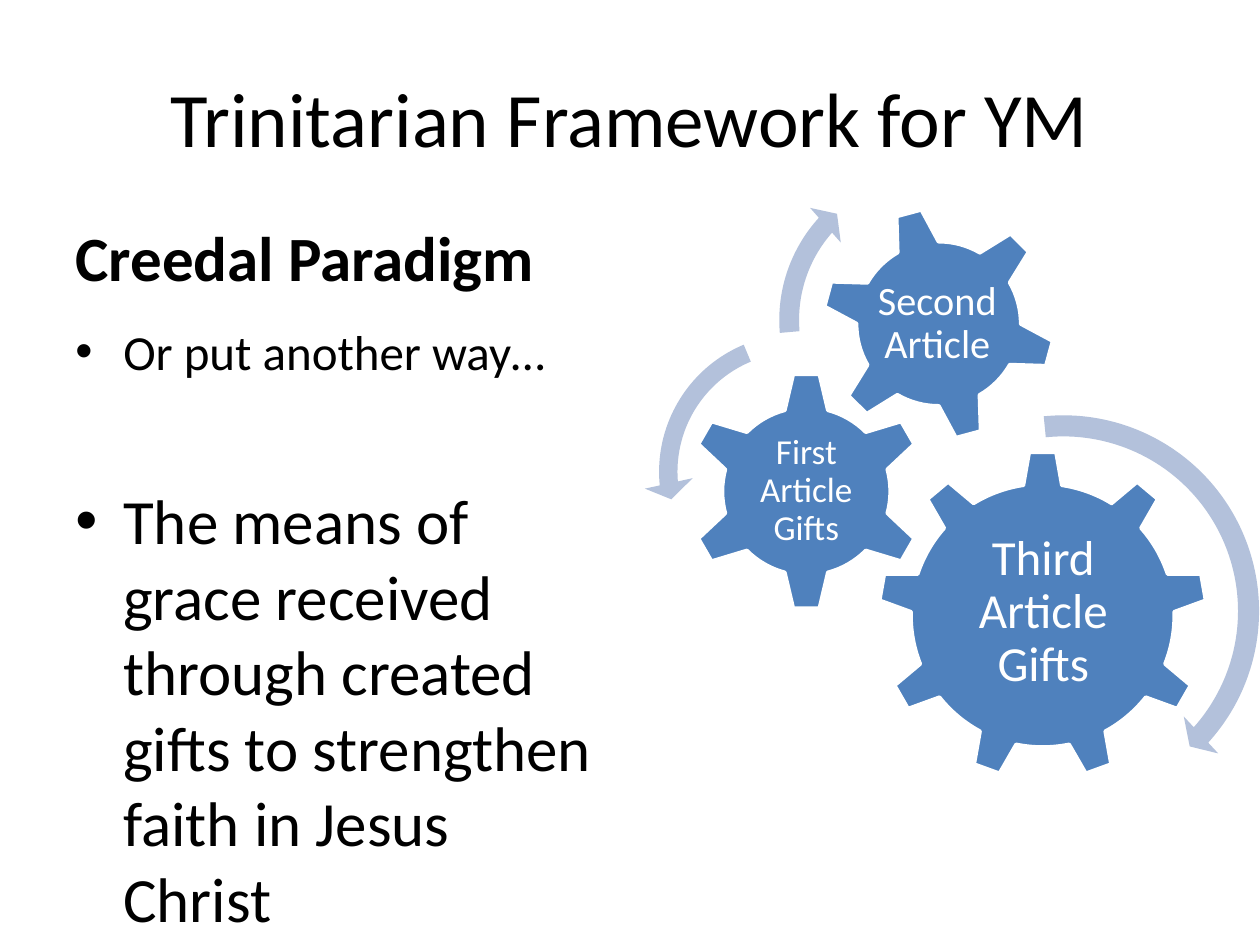
from lxml.etree import SubElement
from pptx import Presentation
from pptx.dml.color import RGBColor
from pptx.enum.shapes import MSO_SHAPE as Shape
from pptx.enum.text import MSO_ANCHOR as Anchor, PP_ALIGN as Align
from pptx.oxml.ns import qn
from pptx.util import Inches, Pt

COLORS = {"text": "000000", "gear": "4F81BD", "arrow": "B3C1DB", "white": "FFFFFF"}
COLUMNS = 100
BULLET_INDENT = Inches(0.38)


class GearSlide:
    font = "Calibri"

    def __init__(self, presentation):
        self.slide = presentation.slides.add_slide(presentation.slide_layouts[6])
        self.unit = presentation.slide_width / COLUMNS

    def place(self, *cells):
        return [round(cell * self.unit) for cell in cells]

    def color(self, name):
        return RGBColor.from_string(COLORS[name])

    def frame(self, box, anchor, inset=None):
        frame = self.slide.shapes.add_textbox(*self.place(*box)).text_frame
        frame.word_wrap = True
        frame.vertical_anchor = anchor
        if inset is not None:
            frame.margin_left = frame.margin_right = Inches(inset)
            frame.margin_top = frame.margin_bottom = Inches(inset)
        return frame

    def add_text(self, paragraph, text, size, color="text", bold=False, align=Align.LEFT):
        paragraph.alignment = align
        run = paragraph.add_run()
        run.text = text
        run.font.name = self.font
        run.font.size = Pt(size)
        run.font.bold = bold
        run.font.color.rgb = self.color(color)

    def heading(self, box, text, size, anchor, **style):
        self.add_text(self.frame(box, anchor).paragraphs[0], text, size, **style)

    def bullets(self, box, items):
        frame = self.frame(box, Anchor.TOP)
        for index, (text, size, space) in enumerate(items):
            paragraph = frame.add_paragraph() if index else frame.paragraphs[0]
            paragraph.space_before = Pt(space)
            self.add_text(paragraph, text, size)
            properties = paragraph._p.get_or_add_pPr()
            properties.set("marL", str(BULLET_INDENT))
            properties.set("indent", str(-BULLET_INDENT))
            SubElement(properties, qn("a:buFont"), typeface="Arial")
            SubElement(properties, qn("a:buChar"), char="•")

    def solid(self, kind, left, top, side, color):
        shape = self.slide.shapes.add_shape(kind, *self.place(left, top, side, side))
        shape.shadow.inherit = False
        shape.fill.solid()
        shape.fill.fore_color.rgb = self.color(color)
        return shape

    def gear(self, kind, spot, label_box, text, size, inset=0.03, rotation=0):
        shape = self.solid(kind, *spot, "gear")
        shape.rotation = rotation
        shape.line.color.rgb = self.color("white")
        shape.line.width = Pt(2)
        paragraph = self.frame(label_box, Anchor.MIDDLE, inset).paragraphs[0]
        paragraph.line_spacing = 0.9
        self.add_text(paragraph, text, size, "white", align=Align.CENTER)

    def arrow(self, kind, spot, adjustments):
        shape = self.solid(kind, *spot, "arrow")
        shape.line.fill.background()
        for index, value in enumerate(adjustments):
            shape.adjustments[index] = value


def main():
    presentation = Presentation()
    presentation.slide_width = Inches(10)
    presentation.slide_height = Inches(7.5)
    page = GearSlide(presentation)

    page.heading((5, 3, 90, 12.5), "Trinitarian Framework for YM", 44,
                 Anchor.MIDDLE, align=Align.CENTER)
    page.heading((5, 16.8, 44.2, 7), "Creedal Paradigm", 36, Anchor.BOTTOM, bold=True)
    page.bullets((5, 25, 44.2, 50), [
        ("Or put another way…", 28, 5.6),
        ("The means of grace received through created gifts to strengthen "
         "faith in Jesus Christ", 36, 58),
    ])

    page.gear(Shape.GEAR_9, (69.7, 35.8, 26.1), (75, 41.9, 15.6, 13.4),
              "Third Article Gifts", 28, inset=0.04)
    page.gear(Shape.GEAR_6, (54.5, 29.5, 19), (59.3, 34.3, 9.4, 9.4),
              "First Article Gifts", 20)
    page.gear(Shape.GEAR_6, (65.2, 16.4, 18.6), (69.2, 20.5, 10.4, 10.4),
              "Second Article", 23, rotation=345)

    page.arrow(Shape.CIRCULAR_ARROW, (67.7, 31.8, 33.4),
               (0.05, 2.99, 25.2, 158.54, 0.06))
    page.arrow(Shape.LEFT_CIRCULAR_ARROW, (51.1, 25.3, 24.3),
               (0.06, 4.3, 104.89, 148.38, 0.08))
    page.arrow(Shape.CIRCULAR_ARROW, (60.8, 12.3, 26.2),
               (0.06, 3.94, 133.14, 105.08, 0.07))

    presentation.save("out.pptx")


if __name__ == "__main__":
    main()
